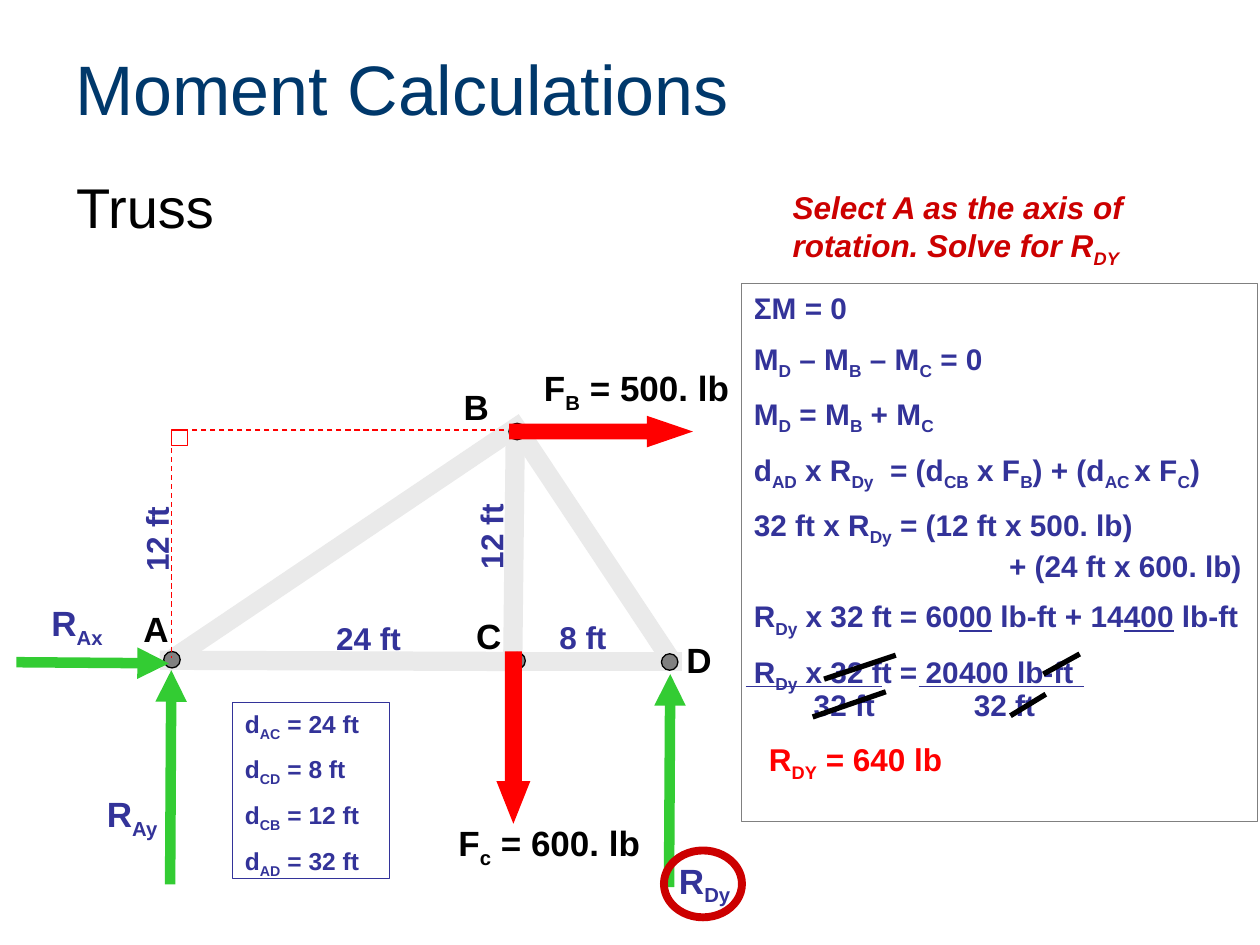
from lxml import etree
from pptx import Presentation
from pptx.dml.color import RGBColor
from pptx.enum import dml, shapes, text
from pptx.oxml import ns
from pptx.util import Pt

COLORS = {"navy": "00386B", "black": "000000", "blue": "333399", "red": "FF0000",
          "crimson": "CC0000", "green": "33CC33", "gray": "808080", "member": "EAEAEA"}

MEMBERS = [(296.6, 246.2, 384.5, 378.7), (94.3, 379.4, 299.5, 241.2), (294.5, 243.4, 293, 378.7),
           (295.9, 378, 389.5, 378), (91.4, 377.3, 298.8, 378)]
JOINTS = [(382.7, 378.3), (98.3, 377), (295.5, 246.6), (295.5, 377.6)]
JOINT_SIZE = 9.4

POINT_LABELS = [("A", 74.9, 343.4, 40), ("B", 257.8, 216.7, 30), ("C", 265, 347.8, 31),
                ("D", 385.2, 361.4, 28), ("F|c| = 600. lb", 254.9, 465.8, 130),
                ("F|B| = 500. lb", 303.8, 205.9, 130)]
REACTION_LABELS = [("R|Ay|", 54, 449.3, 53), ("R|Ax|", 22.3, 340.2, 53), ("R|Dy|", 380.9, 487.4, 53)]
DIMENSIONS = [("24 ft", 185, 350.3, 51.8, 0), ("8 ft", 312.5, 349.9, 41.8, 0),
              ("12 ft", 254.6, 292, 51.8, 270), ("12 ft", 63.4, 293.4, 51.8, 270)]
REACTIONS = [(97.2, 505.4, 97.9, 383), (382.3, 506.9, 383, 385.2), (9.4, 378.4, 96.5, 379.1)]
GUIDES = [(288, 245.7, 98.2, 245.7), (98.2, 245.7, 98.2, 375.8)]
FRACTION_BARS = [(426.2, 392.4, 504, 392.4), (524.9, 392.4, 619.2, 392.4)]
STRIKES = [(511.9, 374.4, 470.9, 388.1), (597.6, 396.7, 577.4, 409),
           (617, 373.7, 596.2, 385.2), (506.2, 395.3, 464.4, 409.7)]

DISTANCES = ["d|AC| = 24 ft", "d|CD| = 8 ft", "d|CB| = 12 ft", "d|AD| = 32 ft"]
EQUATIONS = ["ΣM = 0",
             "M|D| – M|B| – M|C| = 0",
             "M|D| = M|B| + M|C|",
             "d|AD| x R|Dy|  = (d|CB| x F|B|) + (d|AC |x F|C|)",
             "32 ft x R|Dy| = (12 ft x 500. lb)\v\t+ (24 ft x 600. lb)",
             "R|Dy| x 32 ft = 60~00~ lb-ft + 14~400~ lb-ft",
             "R|Dy| x 32 ft = 20~400~ lb-ft"]

presentation = Presentation()
presentation.slide_width, presentation.slide_height = Pt(720), Pt(540)
slide = presentation.slides.add_slide(presentation.slide_layouts[5])


def rgb(name):
    return RGBColor.from_string(COLORS[name])


def drop_style(shape):
    shape._element.remove(shape._element.find(ns.qn("p:style")))


def add_line(ends, color, width, dashed=False, arrow=False):
    line = slide.shapes.add_connector(shapes.MSO_CONNECTOR.STRAIGHT, *map(Pt, ends))
    drop_style(line)
    line.line.color.rgb = rgb(color)
    line.line.width = Pt(width)
    if dashed:
        line.line.dash_style = dml.MSO_LINE.DASH
    if arrow:
        etree.SubElement(line.line._get_or_add_ln(), ns.qn("a:tailEnd"), type="triangle")
    etree.SubElement(line._element.spPr, ns.qn("a:effectLst"))


def add_figure(kind, box, fill=None, line=None, width=0.75):
    figure = slide.shapes.add_shape(kind, *map(Pt, box))
    drop_style(figure)
    figure.shadow.inherit = False
    if fill:
        figure.fill.solid()
        figure.fill.fore_color.rgb = rgb(fill)
    else:
        figure.fill.background()
    if line:
        figure.line.color.rgb = rgb(line)
        figure.line.width = Pt(width)
    else:
        figure.line.fill.background()
    return figure


def write(shape, lines, size, color, bold=True, italic=False, wrap=True, tab=None):
    frame = shape.text_frame
    frame.word_wrap = wrap
    frame.vertical_anchor = text.MSO_ANCHOR.TOP
    for index, line in enumerate(lines):
        paragraph = frame.add_paragraph() if index else frame.paragraphs[0]
        paragraph.alignment = text.PP_ALIGN.LEFT
        if len(lines) > 1:
            paragraph.space_before = Pt(size * 0.25 if index else 0)
            paragraph.space_after = Pt(size * 0.25)
        if "\t" in line:
            stops = etree.SubElement(paragraph._p.get_or_add_pPr(), ns.qn("a:tabLst"))
            etree.SubElement(stops, ns.qn("a:tab"), pos=str(Pt(tab)), algn="l")
        for part_number, part in enumerate(line.split("|")):
            for piece_number, piece in enumerate(part.split("~")):
                for row_number, row in enumerate(piece.split("\v")):
                    if row_number:
                        paragraph.add_line_break()
                    if not row:
                        continue
                    run = paragraph.add_run()
                    run.text = row
                    font = run.font
                    font.name, font.size = "Arial", Pt(size)
                    font.bold, font.italic = bold, italic
                    font.color.rgb = rgb(color)
                    if piece_number % 2:
                        font.underline = True
                    if part_number % 2:
                        run._r.get_or_add_rPr().set("baseline", "-25000")


def add_label(lines, box, size, color, **style):
    label = slide.shapes.add_textbox(*map(Pt, box))
    write(label, lines, size, color, **style)
    return label


title = slide.shapes.title
title.left, title.top, title.width, title.height = map(Pt, (36, 22, 648, 56.2))
write(title, ["Moment Calculations"], 40, "navy", bold=False)
title.text_frame.vertical_anchor = text.MSO_ANCHOR.MIDDLE
add_label(["Truss"], (36.4, 95, 235, 51), 32, "black", bold=False)

for member in MEMBERS:
    add_line(member, "member", 11)
for x, y in JOINTS:
    add_figure(shapes.MSO_SHAPE.OVAL, (x - JOINT_SIZE / 2, y - JOINT_SIZE / 2, JOINT_SIZE, JOINT_SIZE),
               "gray", "black")

for kind, box, head in [(shapes.MSO_SHAPE.DOWN_ARROW, (283.7, 372.2, 19.4, 98.6), 1.26),
                        (shapes.MSO_SHAPE.RIGHT_ARROW, (290.9, 237.6, 105.1, 18), 1.46)]:
    force = add_figure(kind, box, "red")
    force.adjustments[0], force.adjustments[1] = 0.5, head
for reaction in REACTIONS:
    add_line(reaction, "green", 6, arrow=True)
for guide in GUIDES:
    add_line(guide, "red", 0.75, dashed=True)
add_figure(shapes.MSO_SHAPE.RECTANGLE, (98.2, 245.7, 8.9, 8.9), line="red")

for labels, color in [(POINT_LABELS, "black"), (REACTION_LABELS, "blue")]:
    for label, left, top, width in labels:
        add_label([label], (left, top, width, 31), 20, color)
for label, left, top, width, angle in DIMENSIONS:
    add_label([label], (left, top, width, 28.8), 18, "blue", wrap=False).rotation = angle
add_figure(shapes.MSO_SHAPE.OVAL, (379.4, 486, 44.6, 38.2), line="crimson", width=4.5)

distance_box = add_figure(shapes.MSO_SHAPE.RECTANGLE, (132.9, 401.4, 89.6, 100.8), line="blue", width=0.5)
write(distance_box, DISTANCES, 14, "blue")
equation_box = add_figure(shapes.MSO_SHAPE.RECTANGLE, (423.7, 162, 295, 307.5), line="gray")
write(equation_box, EQUATIONS, 17, "blue", tab=145.8)

add_label(["Select A as the axis of rotation. Solve for R|DY|"], (445.9, 103.9, 230, 50.4), 18, "crimson",
          italic=True)
add_label(["32 ft\t32 ft"], (457.9, 388.8, 184, 27.4), 17, "blue", tab=91.5)
add_label(["R|DY| = 640 lb"], (432.3, 419.4, 257, 28.8), 18, "red")
for bar in FRACTION_BARS:
    add_line(bar, "blue", 0.75)
for strike in STRIKES:
    add_line(strike, "black", 3)

presentation.save("out.pptx")
